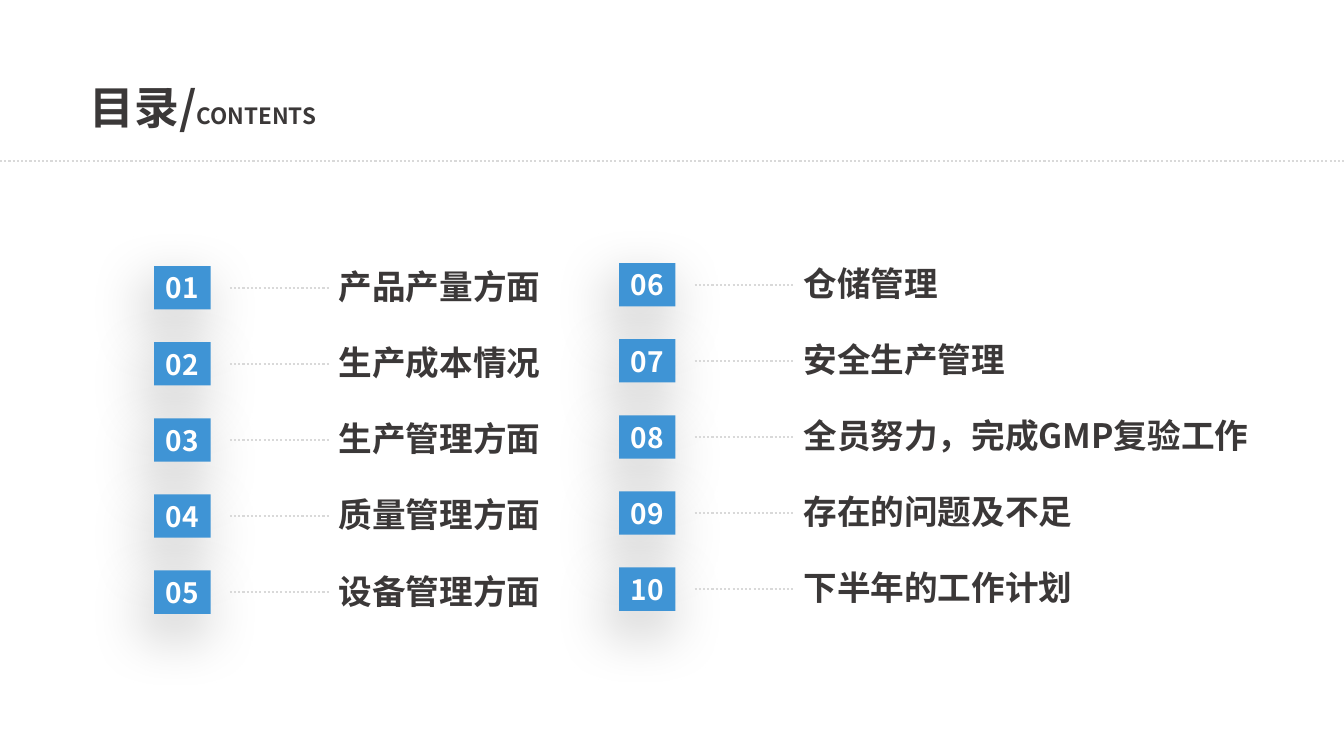
from dataclasses import dataclass

from lxml.etree import SubElement
from pptx import Presentation
from pptx.dml.color import RGBColor
from pptx.enum.dml import MSO_LINE
from pptx.enum.shapes import MSO_CONNECTOR, MSO_SHAPE
from pptx.enum.text import MSO_ANCHOR, MSO_AUTO_SIZE, PP_ALIGN
from pptx.oxml.ns import qn
from pptx.shapes.autoshape import Shape
from pptx.shapes.shapetree import GroupShapes, SlideShapes
from pptx.text.text import _Run as Run
from pptx.util import Inches, Pt

FONT = "Noto Sans CJK SC"
BLUE = RGBColor(0x3F, 0x94, 0xD5)
DARK = RGBColor(0x3B, 0x38, 0x38)
GREY = RGBColor(0xD9, 0xD9, 0xD9)
WHITE = RGBColor(0xFF, 0xFF, 0xFF)

SLIDE_WIDTH, SLIDE_HEIGHT = 13.33, 7.5
ROW_PITCH = 3.02 / 4
BADGE_WIDTH, BADGE_HEIGHT = 0.56, 0.43
LEADER_OFFSET, TOPIC_OFFSET = 0.75, 1.73  # from the badge's left edge


@dataclass
class Topic:
    title: str
    width: float = 3.18


@dataclass
class Column:
    left: float
    top: float
    topics: list[Topic]


COLUMNS = [
    Column(1.53, 2.64, [
        Topic("产品产量方面"),
        Topic("生产成本情况"),
        Topic("生产管理方面"),
        Topic("质量管理方面"),
        Topic("设备管理方面"),
    ]),
    Column(6.14, 2.61, [
        Topic("仓储管理"),
        Topic("安全生产管理"),
        Topic("全员努力，完成GMP复验工作", 4.99),
        Topic("存在的问题及不足"),
        Topic("下半年的工作计划"),
    ]),
]


def style_run(run: Run, size: float, color: RGBColor) -> None:
    run.font.size = Pt(size)
    run.font.bold = True
    run.font.color.rgb = color
    run.font.name = FONT
    # East Asian characters take their own typeface
    SubElement(run.font._element, qn("a:ea"), typeface=FONT)


def add_shadow(badge: Shape) -> None:
    badge.shadow.inherit = False
    effects = badge._element.spPr.find(qn("a:effectLst"))
    shadow = SubElement(effects, qn("a:outerShdw"), blurRad=str(Pt(43)), dist=str(Pt(15)),
                        dir=str(110 * 60000), algn="ctr", rotWithShape="0")
    color = SubElement(shadow, qn("a:srgbClr"), val="000000")
    SubElement(color, qn("a:alpha"), val="26000")


def add_dotted_line(shapes: SlideShapes | GroupShapes, left: float, right: float, y: float) -> None:
    dotted = shapes.add_connector(MSO_CONNECTOR.STRAIGHT, Inches(left), Inches(y), Inches(right), Inches(y))
    dotted.line.color.rgb = GREY
    dotted.line.width = Pt(1.5)
    dotted.line.dash_style = MSO_LINE.ROUND_DOT
    SubElement(dotted._element.spPr, qn("a:effectLst"))


def add_text(shapes: SlideShapes | GroupShapes, left: float, top: float, width: float, height: float,
             parts: list[tuple[str, float]], align: PP_ALIGN | None = None) -> None:
    box = shapes.add_textbox(Inches(left), Inches(top), Inches(width), Inches(height))
    box.text_frame.word_wrap = True
    box.text_frame.auto_size = MSO_AUTO_SIZE.SHAPE_TO_FIT_TEXT
    paragraph = box.text_frame.paragraphs[0]
    paragraph.alignment = align
    for words, size in parts:
        run = paragraph.add_run()
        run.text = words
        style_run(run, size, DARK)


def add_badge(shapes: GroupShapes, left: float, top: float, number: int) -> None:
    badge = shapes.add_shape(MSO_SHAPE.RECTANGLE, Inches(left), Inches(top),
                             Inches(BADGE_WIDTH), Inches(BADGE_HEIGHT))
    badge.fill.solid()
    badge.fill.fore_color.rgb = BLUE
    badge.line.fill.background()
    add_shadow(badge)
    badge.text_frame.text = f"{number:02d}"
    badge.text_frame.vertical_anchor = MSO_ANCHOR.MIDDLE
    paragraph = badge.text_frame.paragraphs[0]
    paragraph.alignment = PP_ALIGN.CENTER
    style_run(paragraph.runs[0], 20, WHITE)


def add_entry(shapes: SlideShapes, left: float, top: float, number: int, topic: Topic) -> None:
    entry = shapes.add_group_shape().shapes
    topic_left = left + TOPIC_OFFSET
    add_badge(entry, left, top, number)
    add_text(entry, topic_left, top - 0.05, topic.width, 0.5, [(topic.title, 24)])
    add_dotted_line(entry, left + LEADER_OFFSET, topic_left, top + BADGE_HEIGHT / 2)


def main() -> None:
    deck = Presentation()
    deck.slide_width, deck.slide_height = Inches(SLIDE_WIDTH), Inches(SLIDE_HEIGHT)
    shapes = deck.slides.add_slide(deck.slide_layouts[6]).shapes

    # Heading and its rule
    add_dotted_line(shapes, 0, SLIDE_WIDTH, 1.6)
    add_text(shapes, 0.79, 0.74, 2.62, 0.64, [("目录/", 32), ("CONTENTS", 16)], PP_ALIGN.JUSTIFY)

    # Numbered topics, counted on from column to column
    number = 0
    for column in COLUMNS:
        for row, topic in enumerate(column.topics):
            number += 1
            add_entry(shapes, column.left, column.top + row * ROW_PITCH, number, topic)

    deck.save("out.pptx")


if __name__ == "__main__":
    main()
